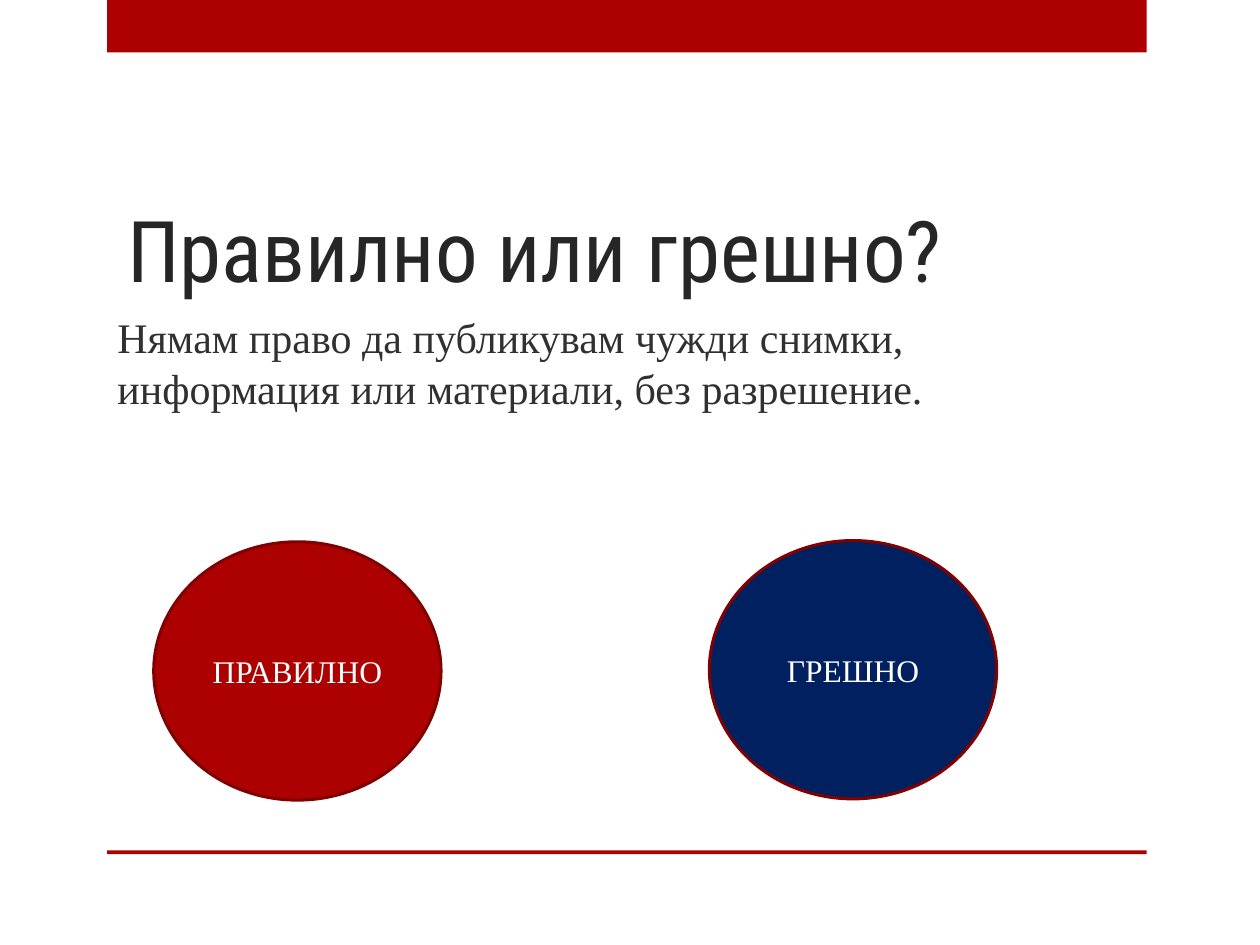
from pptx import Presentation
from pptx.dml.color import RGBColor
from pptx.enum.shapes import MSO_SHAPE as SHAPE
from pptx.enum.text import MSO_ANCHOR as ANCHOR, PP_ALIGN as ALIGN
from pptx.util import Pt

COLORS = {"red": "AD0101", "outline": "800101", "navy": "002060",
          "title": "262626", "body": "303030", "white": "FFFFFF"}
TITLE_FONT, BODY_FONT = "Roboto Condensed", "Times New Roman"

TITLE = "Правилно или грешно?"
STATEMENT = ("Нямам право да публикувам чужди снимки, "
             "информация или материали, без разрешение.")
# Answer label, fill, left, top
ANSWERS = [("ПРАВИЛНО", "red", 87.84, 309.6),
           ("ГРЕШНО", "navy", 405.36, 308.88)]
ANSWER_W, ANSWER_H = 164.16, 147.6
# Top and height of the bands
BANDS = [(0, 30), (486, 2.16)]
BAND_LEFT, BAND_W = 61.2, 594


def color(name):
    return RGBColor.from_string(COLORS[name])


def add_filled(s, kind, left, top, width, height, fill, line=None):
    sp = s.shapes.add_shape(kind, Pt(left), Pt(top), Pt(width), Pt(height))
    sp.shadow.inherit = False
    sp.fill.solid()
    sp.fill.fore_color.rgb = color(fill)
    if line:
        sp.line.color.rgb = color(line)
        sp.line.width = Pt(1.75)
    else:
        sp.line.fill.background()
    return sp


def set_text(sp, text, *, size, fill, font=BODY_FONT, align=ALIGN.LEFT,
             anchor=ANCHOR.MIDDLE, before=0):
    tf = sp.text_frame
    tf.word_wrap = True
    tf.vertical_anchor = anchor
    p = tf.paragraphs[0]
    p.alignment = align
    p.space_before = Pt(before)
    r = p.add_run()
    r.text = text
    r.font.name = font
    r.font.size = Pt(size)
    r.font.color.rgb = color(fill)


prs = Presentation()
prs.slide_width, prs.slide_height = Pt(720), Pt(540)
s = prs.slides.add_slide(prs.slide_layouts[6])

# Bands at top and bottom
for top, height in BANDS:
    add_filled(s, SHAPE.RECTANGLE, BAND_LEFT, top, BAND_W, height, "red")

# Statement and title
sp = s.shapes.add_textbox(Pt(60), Pt(54), Pt(590), Pt(306))
set_text(sp, STATEMENT, size=24, fill="body", before=4.8)
sp = s.shapes.add_textbox(Pt(65.52), Pt(48.96), Pt(534.24), Pt(126))
set_text(sp, TITLE, size=48.6, fill="title", font=TITLE_FONT,
         anchor=ANCHOR.BOTTOM)

# Answer ellipses
for label, fill, left, top in ANSWERS:
    sp = add_filled(s, SHAPE.OVAL, left, top, ANSWER_W, ANSWER_H, fill, "outline")
    set_text(sp, label, size=18, fill="white", align=ALIGN.CENTER)

prs.save("out.pptx")
